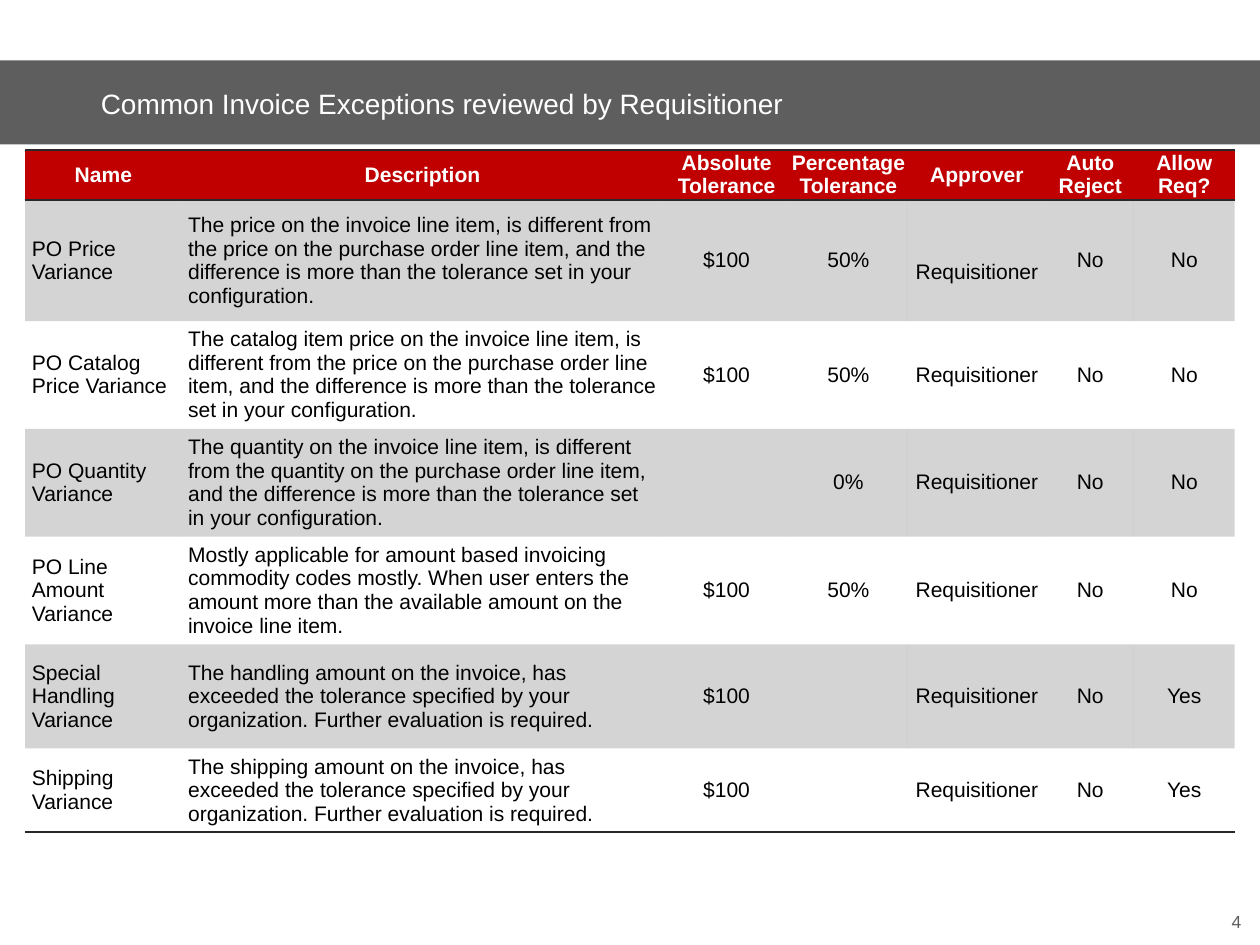
"""Build a slide with a table of common invoice exceptions."""
from lxml import etree
from pptx import Presentation
from pptx.dml.color import RGBColor
from pptx.enum.text import MSO_ANCHOR as Anchor, MSO_AUTO_SIZE as AutoSize, PP_ALIGN as Align
from pptx.oxml import parse_xml
from pptx.oxml.ns import nsdecls, qn
from pptx.util import Inches, Pt

TITLE = "Common Invoice Exceptions reviewed by Requisitioner"
PAGE = "4"
HEADERS = ["Name", "Description", "Absolute Tolerance", "Percentage Tolerance",
           "Approver", "Auto Reject", "Allow Req?"]
ROWS = [
    ("PO Price Variance",
     "The price on the invoice line item, is different from the price on the purchase order "
     "line item, and the difference is more than the tolerance set in your configuration.",
     "$100", "50%", " Requisitioner", "No", "No"),
    ("PO Catalog Price Variance",
     "The catalog item price on the invoice line item, is different from the price on the "
     "purchase order line item, and the difference is more than the tolerance set in your "
     "configuration.",
     "$100", "50%", "Requisitioner", "No", "No"),
    ("PO Quantity Variance",
     "The quantity on the invoice line item, is different from the quantity on the purchase "
     "order line item, and the difference is more than the tolerance set in your configuration.",
     "", "0%", "Requisitioner", "No", "No"),
    ("PO Line Amount Variance",
     "Mostly applicable for amount based invoicing commodity codes mostly. When user enters "
     "the amount more than the available amount on the invoice line item.",
     "$100", "50%", "Requisitioner", "No", "No"),
    ("Special Handling Variance",
     "The handling amount on the invoice, has exceeded the tolerance specified by your "
     "organization. Further evaluation is required.",
     "$100", "", "Requisitioner", "No", "Yes"),
    ("Shipping Variance",
     "The shipping amount on the invoice, has exceeded the tolerance specified by your "
     "organization. Further evaluation is required.",
     "$100", "", "Requisitioner", "No", "Yes"),
]
SLIDE_WIDTH = 7.5
COL_WIDTHS = [0.93, 2.87, 0.75, 0.7, 0.83, 0.52, 0.6]
ROW_HEIGHTS = [0.28, 0.72, 0.63, 0.63, 0.63, 0.62, 0.5]
GRAY, DARK, RED, WHITE, BLACK = "5E5E5E", "282828", "C00000", "FFFFFF", "000000"
NO_STYLE = "{2D5ABB26-0587-4C30-8999-92F81FD0307C}"


def rgb(color):
    return RGBColor.from_string(color)


def set_font(p, size, color, bold=False):
    p.font.name, p.font.size, p.font.bold = "Arial", Pt(size), bold
    p.font.color.rgb = rgb(color)


def set_margins(item, left, top, right, bottom):
    item.margin_left, item.margin_top = Inches(left), Inches(top)
    item.margin_right, item.margin_bottom = Inches(right), Inches(bottom)


def add_border(cell, sides):
    for i, side in enumerate(sides):
        line = parse_xml(
            f'<a:ln{side} {nsdecls("a")} w="{Pt(1)}"><a:solidFill>'
            f'<a:srgbClr val="{DARK}"/></a:solidFill></a:ln{side}>')
        cell._tc.get_or_add_tcPr().insert(i, line)


def fill_cell(cell, color, alpha=100):
    cell.fill.solid()
    cell.fill.fore_color.rgb = rgb(color)
    if alpha < 100:
        clr = cell._tc.tcPr.find(".//" + qn("a:srgbClr"))
        etree.SubElement(clr, qn("a:alpha"), val=str(alpha * 1000))


def add_title(s):
    sp = s.shapes.title
    sp.left, sp.top, sp.width, sp.height = 0, Inches(0.36), Inches(SLIDE_WIDTH), Inches(0.5)
    sp.fill.solid()
    sp.fill.fore_color.rgb = rgb(GRAY)
    tf = sp.text_frame
    tf.text = TITLE
    tf.auto_size, tf.vertical_anchor = AutoSize.NONE, Anchor.MIDDLE
    set_margins(tf, 0.6, 0.1, 0.1, 0.05)
    p = tf.paragraphs[0]
    p.alignment, p.line_spacing = Align.LEFT, 0.8
    set_font(p, 12, WHITE)


def add_exceptions(s):
    data = [HEADERS, *ROWS]
    table = s.shapes.add_table(
        len(data), len(HEADERS), Inches(0.15), Inches(0.89),
        Inches(sum(COL_WIDTHS)), Inches(sum(ROW_HEIGHTS))).table
    table._tbl.tblPr.find(qn("a:tableStyleId")).text = NO_STYLE
    for col, width in zip(table.columns, COL_WIDTHS):
        col.width = Inches(width)
    for row, height in zip(table.rows, ROW_HEIGHTS):
        row.height = Inches(height)
    for r, texts in enumerate(data):
        for c, text in enumerate(texts):
            cell = table.cell(r, c)
            cell.text, cell.vertical_anchor = text, Anchor.MIDDLE
            p = cell.text_frame.paragraphs[0]
            p.alignment = Align.LEFT if r and c < 2 else Align.CENTER
            if r == 0:
                set_margins(cell, 0.01, 0, 0.01, 0)
                set_font(p, 9, WHITE, True)
                fill_cell(cell, RED)
                add_border(cell, "TB")
                continue
            set_margins(cell, 0.04, 0.02, 0.04, 0.02)
            set_font(p, 9, BLACK)
            if r % 2:
                fill_cell(cell, DARK, 20)
            else:
                cell.fill.background()
            if r == len(ROWS):
                add_border(cell, "B")


def add_page_number(s):
    tf = s.shapes.add_textbox(Inches(6.23), Inches(5.43), Inches(1.16), Inches(0.12)).text_frame
    tf.word_wrap = True
    set_margins(tf, 0, 0, 0, 0)
    p = tf.paragraphs[0]
    p.text, p.alignment, p.line_spacing = PAGE, Align.RIGHT, 0.95
    set_font(p, 7.5, GRAY)


def main():
    prs = Presentation()
    prs.slide_width, prs.slide_height = Inches(SLIDE_WIDTH), Inches(SLIDE_WIDTH * 3 / 4)
    s = prs.slides.add_slide(prs.slide_layouts[5])
    add_page_number(s)
    add_title(s)
    add_exceptions(s)
    prs.save("out.pptx")


if __name__ == "__main__":
    main()
